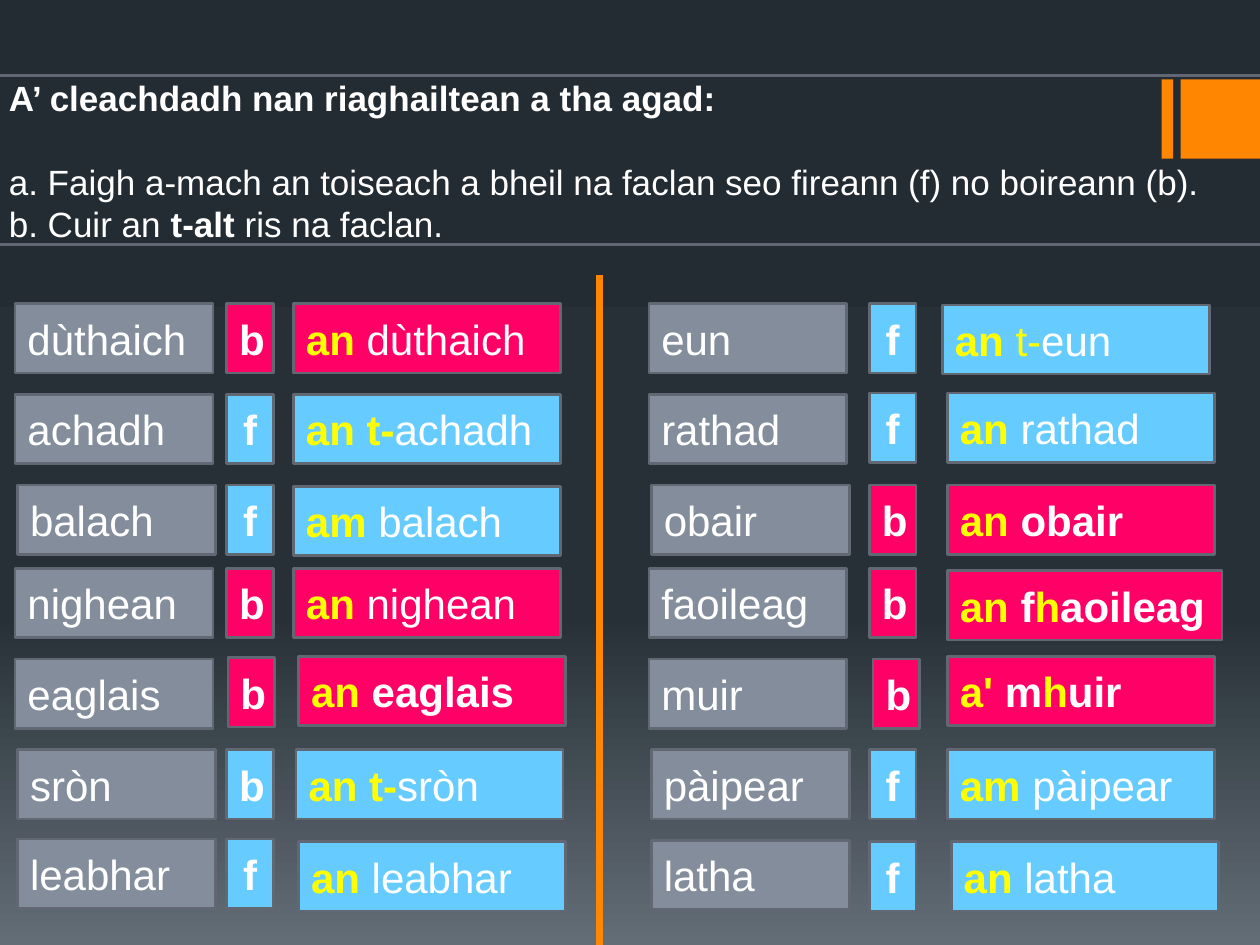
from lxml import etree
from pptx import Presentation
from pptx import util as u
from pptx.dml.color import RGBColor
from pptx.enum import shapes, text
from pptx.oxml.ns import qn

HUES = {"pink": "FF0066", "blue": "66CCFF", "grey": "838D9B", "edge": "616873",
        "gold": "FF8600", "white": "FFFFFF", "yellow": "FFFF00"}
FADE = [(0, "242C33"), (65, "273037"), (100, "636D76")]

# Run styles: colour and weight
STYLES = {"Y": ("yellow", True), "y": ("yellow", False),
          "W": ("white", True), "w": ("white", False)}

HEAD = [
    [("A’ cleachdadh nan riaghailtean a tha agad:", "W")],
    [("a. Faigh a-mach an toiseach a bheil na faclan seo fireann (f) "
      "no boireann (b).", "w")],
    [("b. Cuir an ", "w"), ("t-alt ", "W"), ("ris na faclan.", "w")],
]

# Each row: word, gender, colour, answer runs
LEFT = [
    ("dùthaich", "b", "pink", [("an ", "Y"), ("dùthaich", "w")]),
    ("achadh", "f", "blue", [("an t-", "Y"), ("achadh", "w")]),
    ("balach", "f", "blue", [("am ", "Y"), ("balach", "w")]),
    ("nighean", "b", "pink", [("an ", "Y"), ("nighean", "w")]),
    ("eaglais", "b", "pink", [("an ", "Y"), ("eaglais", "W")]),
    ("sròn", "b", "blue", [("an t-", "Y"), ("sròn", "w")]),
    ("leabhar", "f", "blue", [("an ", "Y"), ("leabhar", "w")]),
]
RIGHT = [
    ("eun", "f", "blue", [("an ", "Y"), ("t-", "y"), ("eun", "w")]),
    ("rathad", "f", "blue", [("an ", "Y"), ("rathad", "w")]),
    ("obair", "b", "pink", [("an ", "Y"), ("obair", "W")]),
    ("faoileag", "b", "pink",
     [("an ", "Y"), ("f", "W"), ("h", "Y"), ("aoileag", "W")]),
    ("muir", "b", "pink", [("a' ", "Y"), ("m", "W"), ("h", "Y"), ("uir", "W")]),
    ("pàipear", "f", "blue", [("am ", "Y"), ("pàipear", "w")]),
    ("latha", "f", "blue", [("an ", "Y"), ("latha", "w")]),
]
SIDES = [(LEFT, (0.12, 1.8, 2.33)), (RIGHT, (5.15, 6.9, 7.52))]
TOPS = [2.41, 3.13, 3.85, 4.51, 5.23, 5.95, 6.67]
WIDTHS = (1.57, 0.37, 2.12)
TALL = 0.55
WIDE = {"faoileag": 2.18}

# Small shifts (right, down) by word, for the word, gender and answer boxes
STILL = (0, 0)
SHIFTS = {
    "balach": [(0.02, 0), STILL, (0, 0.01)],
    "eaglais": [STILL, (0.01, -0.01), (0.04, -0.02)],
    "sròn": [(0.02, 0), STILL, (0.02, 0)],
    "leabhar": [(0.02, -0.01), (0, -0.01), (0.04, 0.01)],
    "eun": [STILL, STILL, (-0.04, 0.01)],
    "rathad": [STILL, (0, -0.01), (0, -0.01)],
    "obair": [(0.02, 0), STILL, STILL],
    "faoileag": [STILL, STILL, (0, 0.02)],
    "muir": [STILL, (0.03, 0), (0, -0.02)],
    "pàipear": [(0.02, 0), STILL, STILL],
    "latha": [(0.02, 0), (0, 0.01), (0.03, 0.01)],
}


def tint(name):
    return RGBColor.from_string(HUES[name])


def write(para, runs, size, align=text.PP_ALIGN.LEFT):
    para.alignment = align
    for words, style in runs:
        run = para.add_run()
        run.text = words
        hue, bold = STYLES[style]
        run.font.name, run.font.size, run.font.bold = "Arial", u.Pt(size), bold
        run.font.color.rgb = tint(hue)


def edge(shape):
    shape.line.color.rgb = tint("edge")
    shape.line.width = u.Pt(1.5)


def block(slide, spot, hue, kind=shapes.MSO_SHAPE.RECTANGLE):
    shape = slide.shapes.add_shape(kind, *map(u.Inches, spot))
    shape.shadow.inherit = False
    shape.fill.solid()
    shape.fill.fore_color.rgb = tint(hue)
    shape.line.fill.background()
    return shape


def card(slide, spot, hue, runs, align=text.PP_ALIGN.LEFT, **kind):
    shape = block(slide, spot, hue, **kind)
    edge(shape)
    frame = shape.text_frame
    frame.word_wrap = True
    frame.vertical_anchor = text.MSO_ANCHOR.MIDDLE
    write(frame.paragraphs[0], runs, 24, align)


def backdrop(slide):
    fill = slide.background.fill
    fill.gradient()
    fill.gradient_angle = 270
    stops = slide.element.find(".//" + qn("a:gsLst"))
    for old in list(stops):
        stops.remove(old)
    for place, hue in FADE:
        stop = etree.SubElement(stops, qn("a:gs"), pos=str(place * 1000))
        etree.SubElement(stop, qn("a:srgbClr"), val=hue)


def header(slide):
    title = slide.shapes.title
    tree = title.element.getparent()
    tree.append(title.element)  # in front of the corner bars
    title.left, title.top, title.width, title.height = map(
        u.Inches, (-0.03, 0.6, 10.04, 1.34))
    geom = etree.SubElement(title.element.spPr, qn("a:prstGeom"), prst="roundRect")
    etree.SubElement(geom, qn("a:avLst"))
    title.fill.background()
    edge(title)
    frame = title.text_frame
    frame.word_wrap = True
    frame.auto_size = text.MSO_AUTO_SIZE.NONE
    frame.vertical_anchor = text.MSO_ANCHOR.MIDDLE
    for i, runs in enumerate(HEAD):
        para = frame.add_paragraph() if i else frame.paragraphs[0]
        write(para, runs, 20)
        para.space_before = u.Pt(24 if i == 1 else 0)


def rows(slide, data, lefts):
    for top, (word, sex, hue, answer) in zip(TOPS, data):
        shifts = SHIFTS.get(word, [STILL] * 3)
        wides = (*WIDTHS[:2], WIDE.get(word, WIDTHS[2]))
        spots = [(x + dx, top + dy, w, TALL)
                 for x, w, (dx, dy) in zip(lefts, wides, shifts)]
        align = text.PP_ALIGN.LEFT if hue == "pink" else text.PP_ALIGN.CENTER
        card(slide, spots[0], "grey", [(word, "w")],
             kind=shapes.MSO_SHAPE.FLOWCHART_PROCESS)
        card(slide, spots[1], hue, [(sex, "W")], align)
        card(slide, spots[2], hue, answer)


def divide(slide):
    line = slide.shapes.add_connector(
        shapes.MSO_CONNECTOR.STRAIGHT, *map(u.Inches, (4.76, 2.18, 4.76, 7.5)))
    line.line.color.rgb = tint("gold")
    line.line.width = u.Pt(3.75)
    etree.SubElement(line.element.spPr, qn("a:effectLst"))


def main():
    deck = Presentation()
    deck.slide_width, deck.slide_height = u.Inches(10), u.Inches(7.5)
    slide = deck.slides.add_slide(deck.slide_layouts[5])
    backdrop(slide)
    for left, wide in [(9.22, 0.09), (9.37, 0.63)]:
        block(slide, (left, 0.63, wide, 0.63), "gold")
    header(slide)
    for data, lefts in SIDES:
        rows(slide, data, lefts)
    divide(slide)
    deck.save("out.pptx")


if __name__ == "__main__":
    main()
